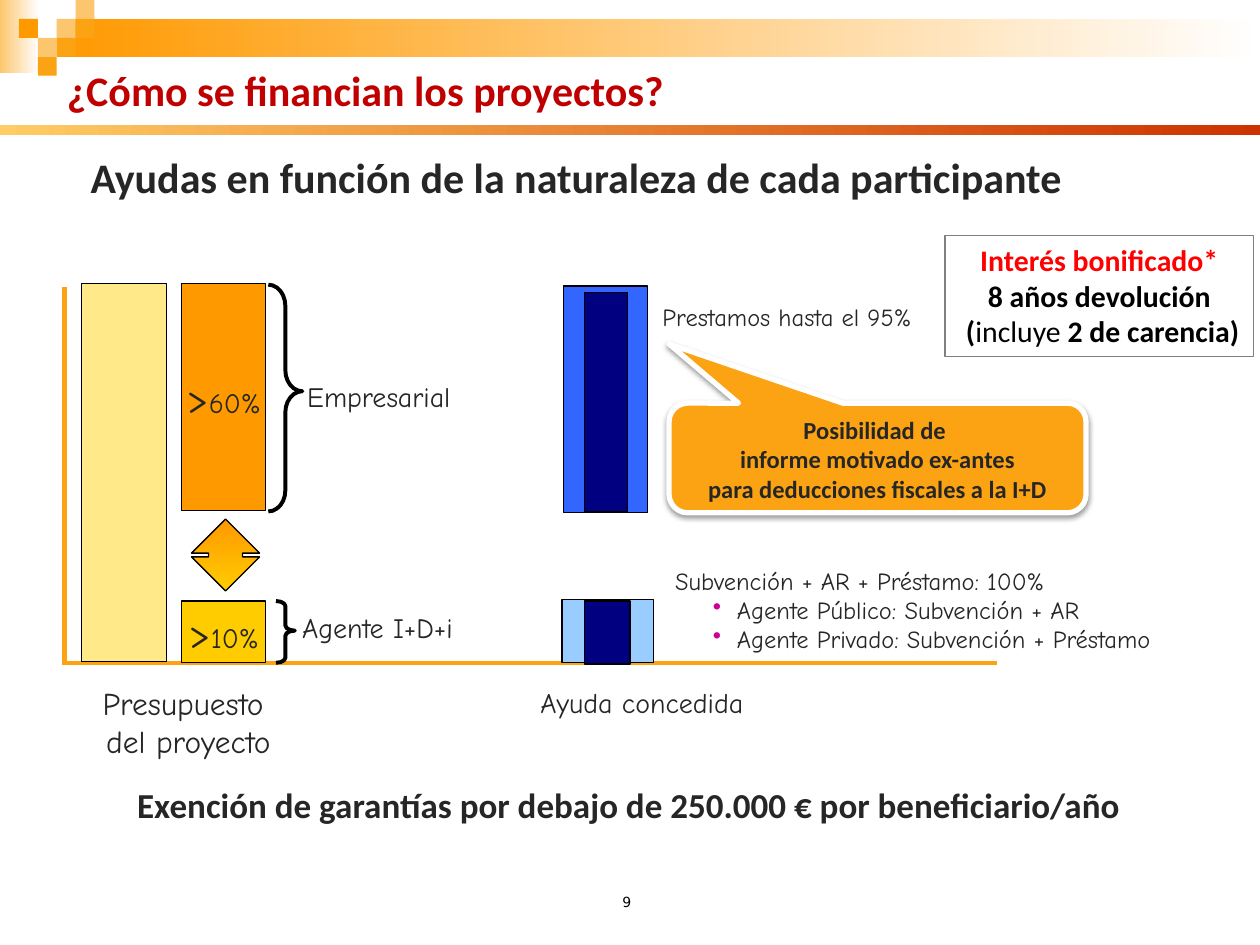
import pptx
import pptx.util
import pptx.dml.color
import pptx.enum.shapes
import pptx.enum.text
import pptx.oxml
import pptx.oxml.ns

deck = pptx.Presentation()
deck.slide_width = pptx.util.Inches(10)
deck.slide_height = pptx.util.Inches(7.5)
column = deck.slide_width / 100
row = deck.slide_height / 75
page = deck.slides.add_slide(deck.slide_layouts[5])
colour = pptx.dml.color.RGBColor.from_string
shapes = pptx.enum.shapes.MSO_SHAPE
anchors = pptx.enum.text.MSO_ANCHOR
left_align = pptx.enum.text.PP_ALIGN.LEFT
centre = pptx.enum.text.PP_ALIGN.CENTER
namespace = pptx.oxml.ns.nsdecls("a")
ink = "262626"
hand = "Comic Neue"
sans = "Calibri"


def block(kind, place, fills=(), line=None, weight=0.75, angle=0):
    left, top, width, height = place
    frame = [round(left * column), round(top * row), round(width * column), round(height * row)]
    if kind is None:
        return page.shapes.add_textbox(*frame)
    shape = page.shapes.add_shape(kind, *frame)
    shape.shadow.inherit = False
    if len(fills) == 2:
        shape.fill.gradient()
        shape.fill.gradient_angle = angle
        for stop, shade in zip(shape.fill.gradient_stops, fills):
            stop.color.rgb = colour(shade)
    elif fills:
        shape.fill.solid()
        shape.fill.fore_color.rgb = colour(fills[0])
    else:
        shape.fill.background()
    if line:
        shape.line.color.rgb = colour(line)
        shape.line.width = pptx.util.Pt(weight)
    else:
        shape.line.fill.background()
    return shape


def write(box, index, words, size, shade=ink, font=hand, bold=False, align=left_align):
    if index == len(box.text_frame.paragraphs):
        box.text_frame.add_paragraph()
    para = box.text_frame.paragraphs[index]
    para.alignment = align
    span = para.add_run()
    span.text = words
    span.font.size = pptx.util.Pt(size)
    span.font.name = font
    span.font.bold = bold
    span.font.color.rgb = colour(shade)
    return para


block(shapes.RECTANGLE, (0, 0, 3.1, 5.8), ["FCC66E", "FFFFFF"])
block(shapes.RECTANGLE, (4.5, 1.5, 95.5, 3), ["FF9900", "FFFFFF"])
tile = 1.5
for across, down, shade in [
    (3, 1, "FCC66E"), (4, 0, "FCC66E"), (4, 1, "FBA313"), (2, 2, "FCC66E"),
    (1, 1, "FF9900"), (3, 2, "FBA313"), (2, 3, "FBA313"),
]:
    block(shapes.RECTANGLE, (across * tile, down * tile, tile, tile), [shade])
block(shapes.RECTANGLE, (0, 9.9, 100, 0.8), ["FFCC66", "CC3300"])

title = page.shapes.title
title.left, title.top = round(4.3 * column), round(3.6 * row)
title.width, title.height = round(85 * column), round(7.1 * row)
title.text_frame.vertical_anchor = anchors.MIDDLE
title.text_frame.auto_size = pptx.enum.text.MSO_AUTO_SIZE.NONE
write(title, 0, "¿Cómo se financian los proyectos?", 24, "C00000", sans, True)

for start_x, start_y, end_x, end_y, weight in [
    (5.1, 52.6, 79.1, 52.6, 2.25), (5.1, 22.8, 5.1, 52.8, 3),
]:
    axis = page.shapes.add_connector(
        pptx.enum.shapes.MSO_CONNECTOR.STRAIGHT,
        round(start_x * column), round(start_y * row), round(end_x * column), round(end_y * row),
    )
    axis.line.color.rgb = colour("FBA313")
    axis.line.width = pptx.util.Pt(weight)
    axis._element.spPr.append(pptx.oxml.parse_xml(f"<a:effectLst {namespace}/>"))

for place, shade in [
    ((6.5, 22.5, 6.7, 30), "FFE989"),
    ((44.7, 22.7, 6.7, 18), "3366FF"),
    ((46.4, 23.2, 3.4, 17.4), "000080"),
    ((44.6, 47.6, 7.3, 5), "99CCFF"),
    ((46.4, 47.7, 3.6, 5), "000080"),
]:
    block(shapes.RECTANGLE, place, [shade], "000000")

for top, height, shade, share in [(47.7, 4.9, "FFCC00", "10%"), (22.5, 18, "FF9900", "60%")]:
    bar = block(shapes.RECTANGLE, (14.4, top, 6.7, height), [shade], "000000")
    bar.text_frame.word_wrap = False
    bar.text_frame.vertical_anchor = anchors.MIDDLE
    write(bar, 0, ">", 24, align=centre)
    write(bar, 0, share, 16, align=centre)

for place, bend, point in [
    ((21.3, 22.6, 2.7, 18), 0.62, 0.47), ((21.9, 47.7, 1.5, 4.9), 0.27, 0.48),
]:
    brace = block(shapes.RIGHT_BRACE, place, line="000000", weight=2.25)
    brace.adjustments[0] = bend
    brace.adjustments[1] = point

arrow = block(shapes.UP_DOWN_ARROW, (15.2, 41.2, 5.4, 5.7), ["FF9900", "FFCC00"], "000000", angle=270)
arrow.adjustments[0] = 0.2
arrow.adjustments[1] = 0.5

for place, lines, size, align in [
    ((6.5, 53.8, 16.9, 7), ["Presupuesto ", "del proyecto"], 18, centre),
    ((23.4, 29.6, 14.3, 3.7), ["Empresarial"], 16, left_align),
    ((23, 48, 15.7, 3.7), ["Agente I+D+i"], 16, left_align),
    ((51.6, 23.5, 23.6, 3.3), ["Prestamos hasta el 95%"], 14, left_align),
    ((41.3, 53.9, 19.3, 3.7), ["Ayuda concedida"], 16, centre),
]:
    label = block(None, place)
    label.text_frame.word_wrap = False
    for index, words in enumerate(lines):
        write(label, index, words, size, align=align)

aid = block(None, (52.6, 44.4, 42.8, 8.1))
aid.text_frame.word_wrap = False
write(aid, 0, "Subvención + AR + Préstamo: 100%", 14)
for index, words in enumerate(["Agente Público: Subvención + AR", "Agente Privado: Subvención + Préstamo"], 1):
    para = write(aid, index, words, 14)
    para.level = 1
    marks = para._p.get_or_add_pPr()
    marks.set("marL", str(pptx.util.Inches(0.49)))
    marks.set("indent", str(pptx.util.Inches(-0.19)))
    marks.append(pptx.oxml.parse_xml(f'<a:buClr {namespace}><a:srgbClr val="CC0099"/></a:buClr>'))
    marks.append(pptx.oxml.parse_xml(f'<a:buChar {namespace} char="•"/>'))

callout = block(shapes.ROUNDED_RECTANGULAR_CALLOUT, (53.1, 32, 33.1, 8.7), ["FBA313"], "FFFFFF", 3)
for index, amount in enumerate([-0.5, -1.04, 0.17]):
    callout.adjustments[index] = amount
callout._element.spPr.find(pptx.oxml.ns.qn("a:effectLst")).append(pptx.oxml.parse_xml(
    f'<a:outerShdw {namespace} blurRad="40000" dist="20000" dir="5400000" rotWithShape="0">'
    '<a:srgbClr val="000000"><a:alpha val="38000"/></a:srgbClr></a:outerShdw>'
))
callout.text_frame.vertical_anchor = anchors.TOP
for index, words in enumerate([
    "Posibilidad de ", "informe motivado ex-antes", "para deducciones fiscales a la I+D",
]):
    write(callout, index, words, 14, font=sans, bold=True, align=centre)

heading = block(None, (5.9, 11.5, 89, 3.9))
heading.text_frame.word_wrap = True
heading.text_frame.margin_left = heading.text_frame.margin_right = pptx.util.Inches(0.11)
para = write(heading, 0, "Ayudas en función de la naturaleza de cada participante", 24, font=sans, bold=True)
marks = para._p.get_or_add_pPr()
marks.set("marL", str(pptx.util.Inches(0.1)))
marks.set("indent", str(pptx.util.Inches(-0.08)))

closing = block(None, (9.9, 61.7, 86.2, 4.4))
closing.text_frame.word_wrap = True
write(closing, 0, "Exención de garantías por debajo de 250.000 € por beneficiario/año", 20, font=sans, bold=True)

terms = block(shapes.RECTANGLE, (75, 18.7, 24.5, 9.6), line="808080")
terms.text_frame.word_wrap = False
terms.text_frame.vertical_anchor = anchors.TOP
for index, words, shade, bold in [
    (0, "Interés bonificado*", "FF0000", True),
    (1, "8 años devolución", "000000", True),
    (2, " (", "000000", True),
    (2, "incluye", "000000", False),
    (2, " 2 de carencia)", "000000", True),
]:
    write(terms, index, words, 17, shade, sans, bold, centre)

number = block(None, (43.9, 70.4, 11.7, 2.3))
number.text_frame.word_wrap = True
write(number, 0, "9", 8, "000000", "DejaVu Sans", align=centre)

deck.save("out.pptx")
